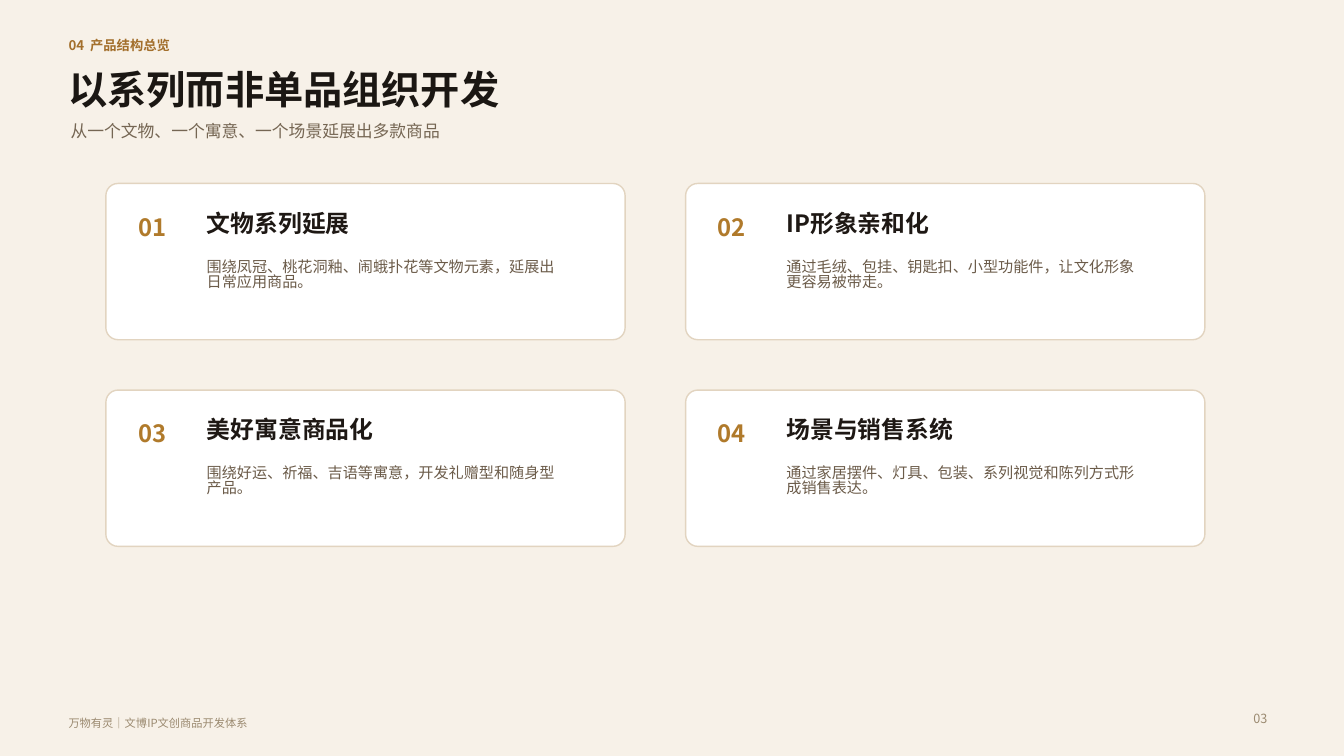
from lxml.etree import SubElement
from pptx import Presentation
from pptx.dml.color import RGBColor
from pptx.enum.shapes import MSO_SHAPE
from pptx.enum.text import MSO_ANCHOR, PP_ALIGN
from pptx.oxml.ns import qn
from pptx.util import Inches, Pt

CREAM = RGBColor(0xF7, 0xF1, 0xE8)
WHITE = RGBColor(0xFF, 0xFF, 0xFF)
SAND = RGBColor(0xE2, 0xD4, 0xC0)
AMBER = RGBColor(0xA3, 0x6F, 0x2C)
GOLD = RGBColor(0xB0, 0x7A, 0x2B)
BLACK = RGBColor(0x1B, 0x17, 0x13)
INK = RGBColor(0x1E, 0x18, 0x14)
TAUPE = RGBColor(0x75, 0x66, 0x53)
BROWN = RGBColor(0x6B, 0x5B, 0x49)
KHAKI = RGBColor(0x9B, 0x8A, 0x70)

CARDS = [
    ("文物系列延展", "围绕凤冠、桃花洞釉、闹蛾扑花等文物元素，延展出日常应用商品。"),
    ("IP形象亲和化", "通过毛绒、包挂、钥匙扣、小型功能件，让文化形象更容易被带走。"),
    ("美好寓意商品化", "围绕好运、祈福、吉语等寓意，开发礼赠型和随身型产品。"),
    ("场景与销售系统", "通过家居摆件、灯具、包装、系列视觉和陈列方式形成销售表达。"),
]


class Deck:
    """Holds the style and the current slide."""

    font = "Noto Sans CJK SC"
    inset = Inches(0.08)

    def __init__(self):
        self.file = Presentation()
        self.file.slide_width = Inches(13.33)
        self.file.slide_height = Inches(7.5)
        self.slide = self.file.slides.add_slide(self.file.slide_layouts[6])
        fill = self.slide.background.fill
        fill.solid()
        fill.fore_color.rgb = CREAM

    def text(self, words, left, top, width, height, *, size, color,
             bold=False, align=PP_ALIGN.LEFT, pitch=None):
        box = self.slide.shapes.add_textbox(
            Inches(left), Inches(top), Inches(width), Inches(height))
        frame = box.text_frame
        frame.word_wrap = True
        frame.vertical_anchor = MSO_ANCHOR.MIDDLE
        frame.margin_left = frame.margin_right = self.inset
        frame.margin_top = frame.margin_bottom = 0
        line = frame.paragraphs[0]
        line.alignment = align
        if pitch:
            line.line_spacing = pitch
        run = line.add_run()
        run.text = words
        run.font.size = Pt(size)
        run.font.bold = bold
        run.font.color.rgb = color
        run.font.name = self.font
        SubElement(run._r.get_or_add_rPr(), qn("a:ea")).set("typeface", self.font)

    def panel(self, left, top, width, height):
        shape = self.slide.shapes.add_shape(
            MSO_SHAPE.ROUNDED_RECTANGLE,
            Inches(left), Inches(top), Inches(width), Inches(height))
        shape.shadow.inherit = False
        shape.adjustments[0] = 0.12 / height
        shape.fill.solid()
        shape.fill.fore_color.rgb = WHITE
        shape.line.color.rgb = SAND
        shape.line.width = Pt(1)

    def card(self, left, top, number, title, body):
        self.panel(left, top, 5.15, 1.55)
        self.text(number, left + 0.24, top + 0.28, 0.48, 0.3,
                  size=17, color=GOLD, bold=True)
        self.text(title, left + 0.92, top + 0.25, 3.65, 0.28,
                  size=17, color=INK, bold=True)
        self.text(body, left + 0.92, top + 0.68, 3.75, 0.46,
                  size=10.8, color=BROWN, pitch=0.82)


def main():
    deck = Deck()
    deck.text("04  产品结构总览", 0.6, 0.33, 3.2, 0.23,
              size=9.5, color=AMBER, bold=True)
    deck.text("以系列而非单品组织开发", 0.6, 0.63, 8.9, 0.5,
              size=28, color=BLACK, bold=True)
    deck.text("从一个文物、一个寓意、一个场景延展出多款商品", 0.62, 1.14, 9.2, 0.32,
              size=12, color=TAUPE)
    for index, (title, body) in enumerate(CARDS):
        row, col = divmod(index, 2)
        deck.card(1.05 + 5.75 * col, 1.82 + 2.05 * row,
                  f"{index + 1:02}", title, body)
    deck.text("万物有灵｜文博IP文创商品开发体系", 0.6, 7.08, 4.6, 0.18,
              size=8, color=KHAKI)
    deck.text("03", 12.1, 7.02, 0.55, 0.22,
              size=9, color=KHAKI, align=PP_ALIGN.RIGHT)
    deck.file.save("out.pptx")


if __name__ == "__main__":
    main()
